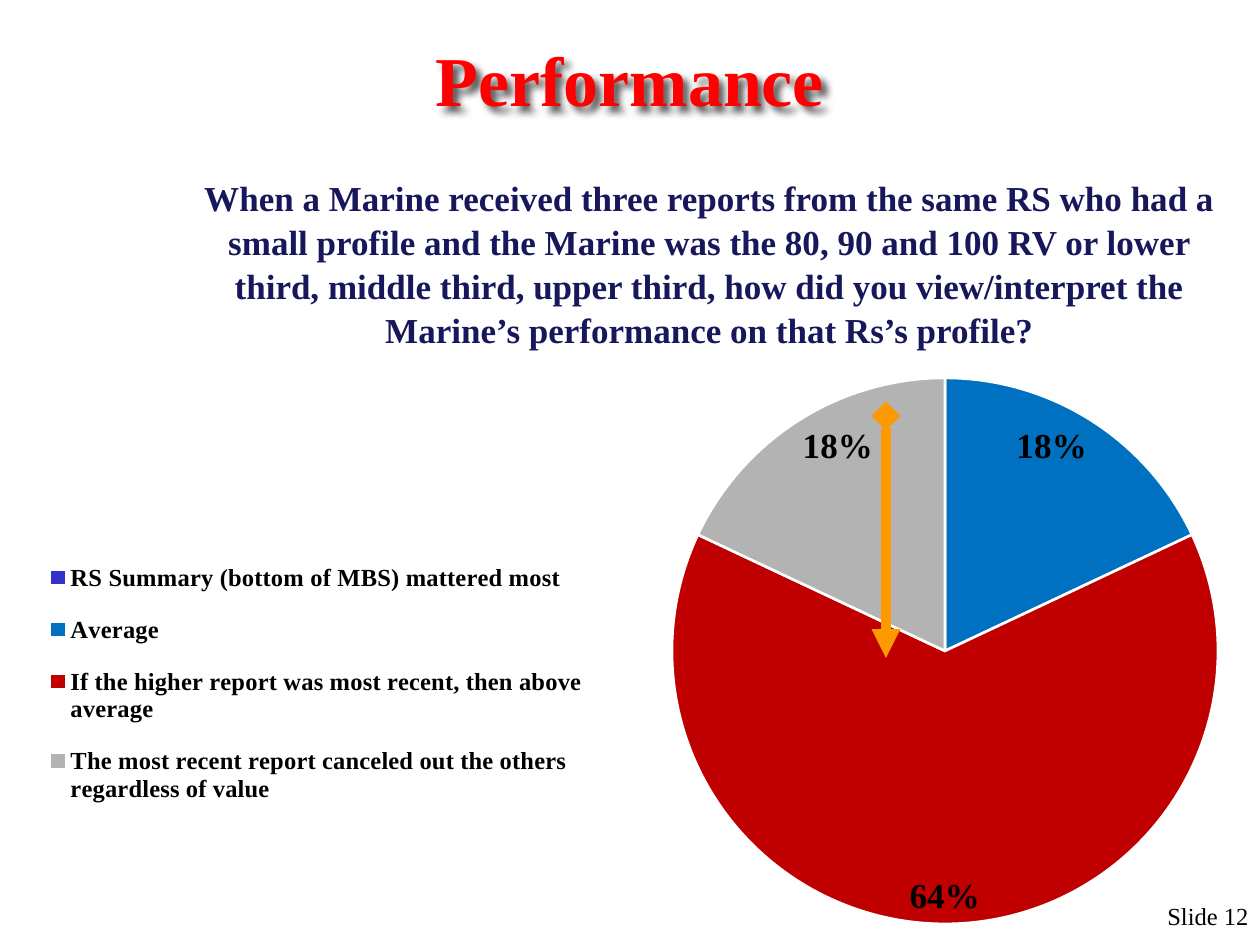
import pptx
import pptx.chart.data
import pptx.dml.color
import pptx.enum.chart
import pptx.enum.shapes
import pptx.enum.text
import pptx.oxml
import pptx.oxml.ns
import pptx.util

RGBColor = pptx.dml.color.RGBColor
Align = pptx.enum.text.PP_ALIGN
Anchor = pptx.enum.text.MSO_ANCHOR

PX = 914400 // 126
FONT = "Times New Roman"
RED = RGBColor(0xFF, 0x00, 0x00)
NAVY = RGBColor(0x17, 0x17, 0x5C)
BLACK = RGBColor(0x00, 0x00, 0x00)
WHITE = RGBColor(0xFF, 0xFF, 0xFF)
ORANGE = RGBColor(0xFF, 0x99, 0x00)

ANSWERS = [
    ("RS Summary (bottom of MBS) mattered most", 0, RGBColor(0x33, 0x33, 0xCC)),
    ("Average", 0.18, RGBColor(0x00, 0x70, 0xC0)),
    ("If the higher report was most recent, then above average", 0.64,
     RGBColor(0xC0, 0x00, 0x00)),
    ("The most recent report canceled out the others regardless of value", 0.18,
     RGBColor(0xB3, 0xB3, 0xB3)),
]
QUESTION = (
    "When a Marine received three reports from the same RS who had a small profile "
    "and the Marine was the 80, 90 and 100 RV or lower third, middle third, upper third, "
    "how did you view/interpret the Marine’s performance on that Rs’s profile?"
)


def px(*lengths):
    return [pptx.util.Emu(length * PX) for length in lengths]


def append_xml(parent, tag, attributes="", content=""):
    namespaces = pptx.oxml.ns.nsdecls("a", "c")
    parent.append(pptx.oxml.parse_xml(
        f"<{tag} {namespaces} {attributes}>{content}</{tag}>"))


def style_font(font, size, color, bold=True):
    font.name = FONT
    font.size = pptx.util.Pt(size)
    font.bold = bold
    font.color.rgb = color


def add_text(slide, box, text, size, color, bold=True, align=Align.CENTER,
             anchor=Anchor.TOP, line_spacing=1.0):
    shape = slide.shapes.add_textbox(*px(*box))
    frame = shape.text_frame
    frame.word_wrap = True
    frame.vertical_anchor = anchor
    paragraph = frame.paragraphs[0]
    paragraph.text = text
    paragraph.alignment = align
    paragraph.line_spacing = line_spacing
    style_font(paragraph.font, size, color, bold)
    return shape


def add_soft_shadow(shape):
    append_xml(
        shape._element.spPr, "a:effectLst", content=(
            '<a:outerShdw blurRad="50800" dist="50800" dir="2700000" algn="tl">'
            '<a:srgbClr val="000000"><a:alpha val="65000"/></a:srgbClr></a:outerShdw>'))


def set_layout(element, x, y, width, height, inner=False):
    """Place a plot area or legend by fractions of the chart."""
    target = '<c:layoutTarget val="inner"/>' if inner else ""
    modes = '<c:xMode val="edge"/><c:yMode val="edge"/>'
    values = "".join(f'<c:{name} val="{value}"/>' for name, value in
                     zip("xywh", (x, y, width, height)))
    layout = element.get_or_add_layout() if hasattr(element, "get_or_add_layout") \
        else element.find(pptx.oxml.ns.qn("c:layout"))
    if layout is None:
        append_xml(element, "c:layout")
        layout = element[-1]
        element.insert(0, layout)
    for child in list(layout):
        layout.remove(child)
    append_xml(layout, "c:manualLayout", content=target + modes + values)


def add_answer_pie(slide, box):
    data = pptx.chart.data.CategoryChartData(number_format="0%")
    data.categories = [label for label, _, _ in ANSWERS]
    data.add_series("Series 1", [value for _, value, _ in ANSWERS])
    chart = slide.shapes.add_chart(
        pptx.enum.chart.XL_CHART_TYPE.PIE, *px(*box), data).chart
    chart.has_title = False
    style_font(chart.font, 14, BLACK)

    chart.has_legend = True
    chart.legend.position = pptx.enum.chart.XL_LEGEND_POSITION.LEFT
    chart.legend.include_in_layout = False
    style_font(chart.legend.font, 14, BLACK)
    set_layout(chart.legend._element, 0.01, 0.31, 0.42, 0.49)
    set_layout(chart._chartSpace.chart.plotArea, 0.5, 0.03, 0.43, 0.94, inner=True)

    plot = chart.plots[0]
    plot.vary_by_categories = True
    for index, (_, _, color) in enumerate(ANSWERS):
        point = plot.series[0].points[index]
        point.format.fill.solid()
        point.format.fill.fore_color.rgb = color
        point.format.line.color.rgb = WHITE
        point.format.line.width = pptx.util.Pt(1.5)

    plot.has_data_labels = True
    labels = plot.data_labels
    labels.show_value = True
    labels.show_percentage = False
    labels.number_format = "0%;;"  # zero stays unlabelled
    labels.number_format_is_linked = False
    labels.position = pptx.enum.chart.XL_LABEL_POSITION.INSIDE_END
    style_font(labels.font, 20, BLACK)


def add_arrow(slide, start, end):
    connector = slide.shapes.add_connector(
        pptx.enum.shapes.MSO_CONNECTOR.STRAIGHT, *px(*start, *end))
    connector.line.color.rgb = ORANGE
    connector.line.width = pptx.util.Pt(5.5)
    line = connector.line._get_or_add_ln()
    append_xml(line, "a:headEnd", 'type="diamond"')
    append_xml(line, "a:tailEnd", 'type="triangle"')
    append_xml(connector._element.spPr, "a:effectLst")


def main():
    presentation = pptx.Presentation()
    presentation.slide_width, presentation.slide_height = px(1260, 945)
    slide = presentation.slides.add_slide(presentation.slide_layouts[6])

    title = add_text(slide, (0, 42, 1260, 73), "Performance", 40, RED,
                     anchor=Anchor.MIDDLE)
    add_soft_shadow(title)
    add_text(slide, (179, 168, 1061, 92), QUESTION, 20, NAVY, line_spacing=1.05)
    add_text(slide, (1155, 895, 301, 50), "Slide 12", 14, BLACK, bold=False,
             align=Align.LEFT)
    add_answer_pie(slide, (37, 357, 1270, 588))
    add_arrow(slide, (886, 416), (886, 658))

    presentation.save("out.pptx")


if __name__ == "__main__":
    main()
